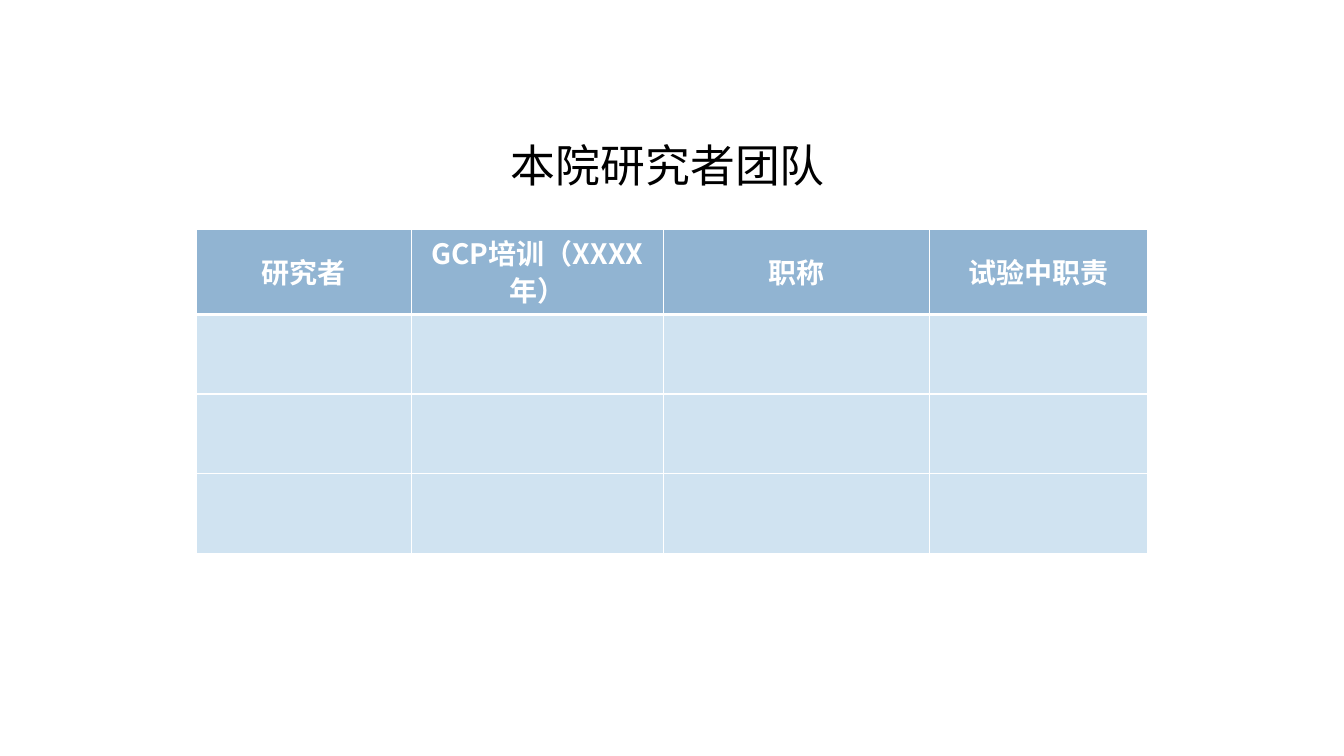
from dataclasses import dataclass

from lxml.etree import SubElement
from pptx import Presentation
from pptx.dml.color import RGBColor
from pptx.enum.text import MSO_ANCHOR, MSO_AUTO_SIZE, PP_ALIGN
from pptx.oxml import parse_xml
from pptx.oxml.ns import nsdecls, qn
from pptx.util import Inches, Pt


@dataclass(frozen=True)
class Theme:
    title_color: str = "000000"
    header_text: str = "FFFFFF"
    header_fill: str = "91B4D2"
    body_fill: str = "D0E3F1"
    border: str = "FFFFFF"
    title_size: int = 32
    header_size: int = 20
    latin_font: str = "Arial"
    chinese_font: str = "Noto Sans CJK SC"


THEME = Theme()
HEADERS = ["研究者", "GCP培训（XXXX年）", "职称", "试验中职责"]
COLUMN_WIDTHS = [2.13, 2.5, 2.64, 2.16]
ROW_HEIGHTS = [0.84, 0.79, 0.79, 0.79]


def style_font(paragraph, size, color, latin_font, bold=False):
    """Set the paragraph font, including its East Asian typeface."""
    font = paragraph.font
    font.size = Pt(size)
    font.bold = bold
    font.color.rgb = RGBColor.from_string(color)
    font.name = latin_font
    properties = paragraph._p.pPr.find(qn("a:defRPr"))
    SubElement(properties, qn("a:ea"), typeface=THEME.chinese_font)


def add_title(slide, text):
    box = slide.shapes.add_textbox(Inches(4.97), Inches(1.32), Inches(3.4), Inches(0.64))
    frame = box.text_frame
    frame.word_wrap = True
    frame.auto_size = MSO_AUTO_SIZE.SHAPE_TO_FIT_TEXT
    frame.text = text
    style_font(frame.paragraphs[0], THEME.title_size, THEME.title_color, THEME.latin_font)


def set_borders(cell, widths):
    """Draw the left, right, top and bottom borders with widths in points."""
    properties = cell._tc.get_or_add_tcPr()
    for index, (side, width) in enumerate(zip("LRTB", widths)):
        line = parse_xml(
            f'<a:ln{side} {nsdecls("a")} w="{Pt(width)}"><a:solidFill>'
            f'<a:srgbClr val="{THEME.border}"/></a:solidFill></a:ln{side}>'
        )
        properties.insert(index, line)


def fill_cell(cell, color):
    cell.fill.solid()
    cell.fill.fore_color.rgb = RGBColor.from_string(color)


def write_header(cell, text):
    cell.text = text
    cell.vertical_anchor = MSO_ANCHOR.MIDDLE
    paragraph = cell.text_frame.paragraphs[0]
    paragraph.alignment = PP_ALIGN.CENTER
    paragraph.line_spacing = 0.9
    paragraph.space_after = Pt(2)
    style_font(paragraph, THEME.header_size, THEME.header_text, THEME.chinese_font, bold=True)


def add_team_table(slide):
    table = slide.shapes.add_table(
        len(ROW_HEIGHTS), len(COLUMN_WIDTHS), Inches(1.95), Inches(2.28),
        Inches(sum(COLUMN_WIDTHS)), Inches(sum(ROW_HEIGHTS)),
    ).table
    for column, width in zip(table.columns, COLUMN_WIDTHS):
        column.width = Inches(width)
    for row, height in zip(table.rows, ROW_HEIGHTS):
        row.height = Inches(height)
    for row_index, row in enumerate(table.rows):
        for cell in row.cells:
            fill_cell(cell, THEME.body_fill if row_index else THEME.header_fill)
            top = 3 if row_index == 1 else 1
            bottom = 3 if row_index == 0 else 1
            set_borders(cell, (1, 1, top, bottom))
    for cell, text in zip(table.rows[0].cells, HEADERS):
        write_header(cell, text)


def main():
    presentation = Presentation()
    presentation.slide_width = Inches(13.33)
    presentation.slide_height = Inches(7.5)
    slide = presentation.slides.add_slide(presentation.slide_layouts[6])
    add_title(slide, "本院研究者团队")
    add_team_table(slide)
    presentation.save("out.pptx")


if __name__ == "__main__":
    main()
